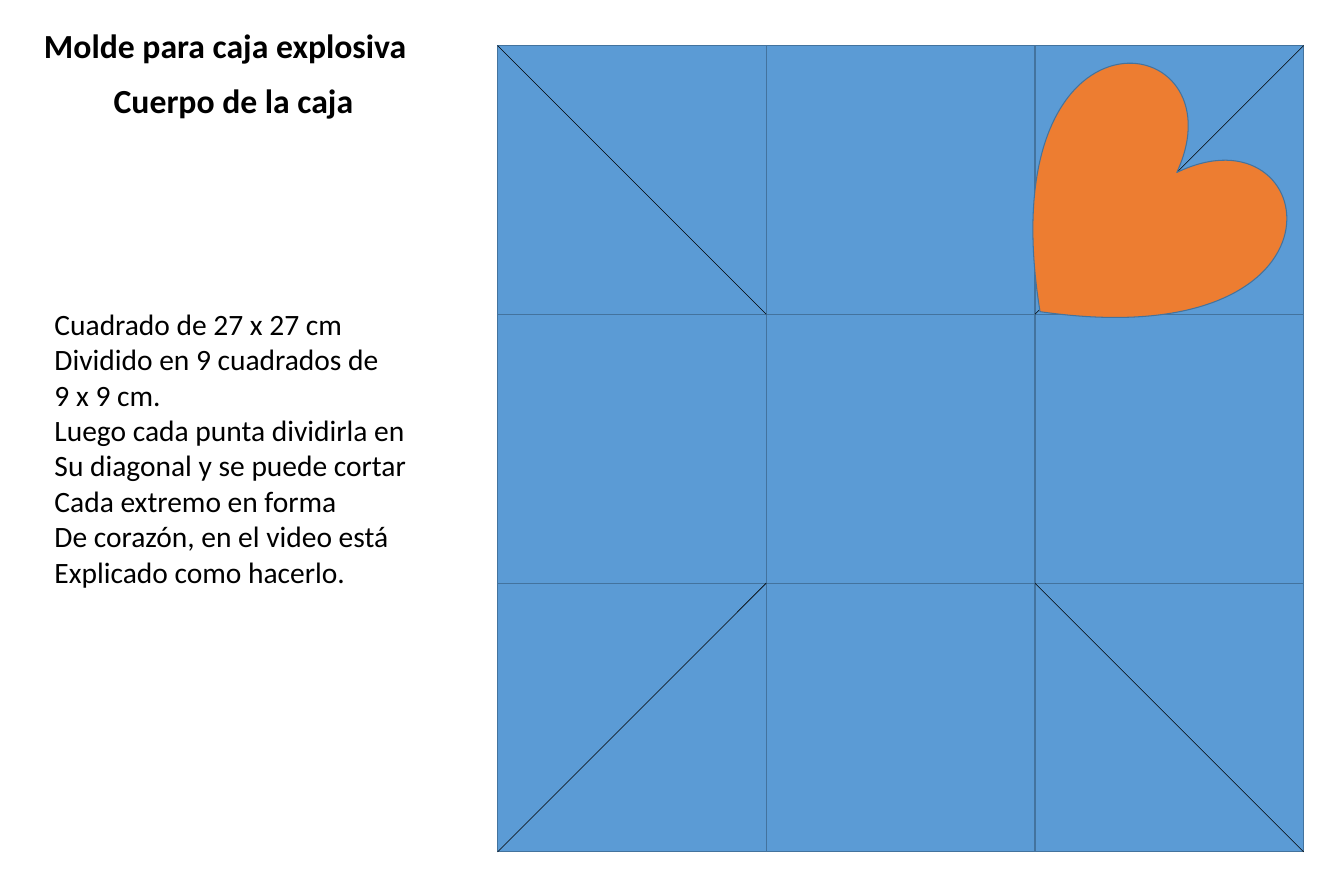
from lxml import etree
from pptx import Presentation
from pptx.dml.color import RGBColor
from pptx.enum import shapes, text
from pptx.oxml import ns
from pptx.util import Inches, Pt

COLORS = {"square": "5B9BD5", "edge": "43739E", "heart": "ED7D31", "ink": "000000"}
LEFT, TOP, SIDE = 6.56, 0.6, 3.543

deck = Presentation()
deck.slide_width, deck.slide_height = Inches(17.72), Inches(11.81)
page = deck.slides.add_slide(deck.slide_layouts[5])


def write(box, place, lines, size, bold):
    box.left, box.top, box.width, box.height = map(Inches, place)
    frame = box.text_frame
    frame.text = "\n".join(lines)
    layout = {
        "word_wrap": False,
        "auto_size": text.MSO_AUTO_SIZE.SHAPE_TO_FIT_TEXT,
        "vertical_anchor": text.MSO_ANCHOR.TOP,
    }
    for name, value in layout.items():
        setattr(frame, name, value)
    for para in frame.paragraphs:
        para.alignment = text.PP_ALIGN.LEFT
        for name, value in {"name": "Calibri", "size": Pt(size), "bold": bold}.items():
            setattr(para.font, name, value)
        para.font.color.rgb = RGBColor.from_string(COLORS["ink"])


def draw(kind, place, fill):
    shape = page.shapes.add_shape(kind, *map(Inches, place))
    shape.shadow.inherit = False
    shape.fill.solid()
    shape.fill.fore_color.rgb = RGBColor.from_string(COLORS[fill])
    shape.line.color.rgb = RGBColor.from_string(COLORS["edge"])
    shape.line.width = Pt(1)
    return shape


write(page.shapes.title, (0.48, 0.28, 5.02, 0.64), ["Molde para caja explosiva"], 32, True)

for row in range(3):
    for column in range(3):
        place = (LEFT + column * SIDE, TOP + row * SIDE, SIDE, SIDE)
        draw(shapes.MSO_SHAPE.RECTANGLE, place, "square")

instructions = [
    "Cuadrado de 27 x 27 cm",
    "Dividido en 9 cuadrados de",
    "9 x 9 cm.",
    "Luego cada punta dividirla en",
    "Su diagonal y se puede cortar",
    "Cada extremo en forma",
    "De corazón, en el video está",
    "Explicado como hacerlo.",
]
steps = page.shapes.add_textbox(0, 0, 0, 0)
write(steps, (0.62, 3.98, 4.89, 3.87), instructions, 28, False)

for outer_x, inner_x in ((0, 1), (3, 2)):
    for outer_y, inner_y in ((0, 1), (3, 2)):
        ends = (
            LEFT + outer_x * SIDE, TOP + outer_y * SIDE,
            LEFT + inner_x * SIDE, TOP + inner_y * SIDE,
        )
        diagonal = page.shapes.add_connector(shapes.MSO_CONNECTOR.STRAIGHT, *map(Inches, ends))
        diagonal.line.color.rgb = RGBColor.from_string(COLORS["ink"])
        diagonal.line.width = Pt(0.5)
        etree.SubElement(diagonal.element.spPr, ns.qn("a:effectLst"))

heart = draw(shapes.MSO_SHAPE.HEART, (13.2, 1.17, 3.43, 3.43), "heart")
heart.rotation = 44.5

subtitle = page.shapes.add_textbox(0, 0, 0, 0)
write(subtitle, (1.4, 1, 3.39, 0.64), ["Cuerpo de la caja"], 32, True)

deck.save("out.pptx")
